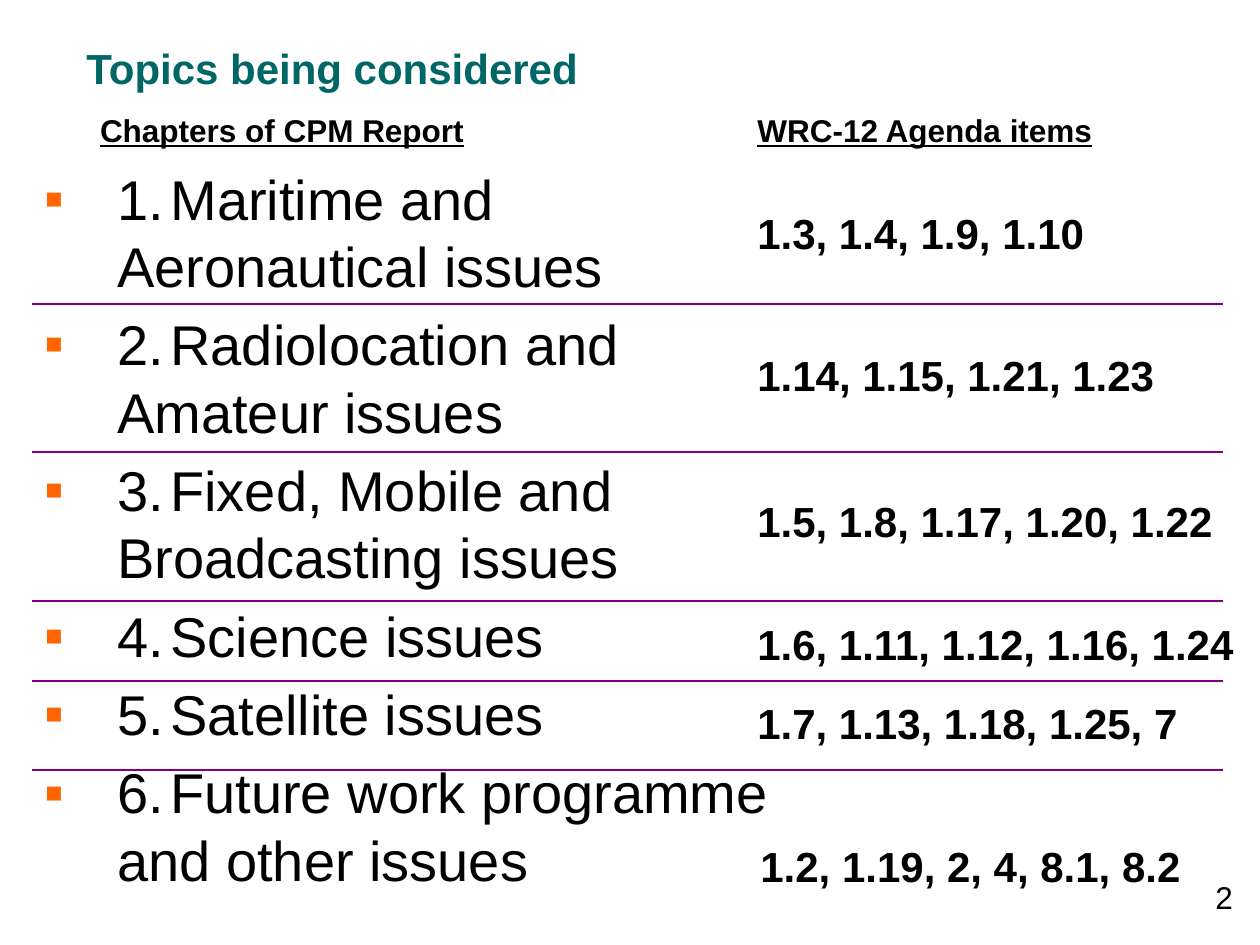
from lxml import etree
from pptx import Presentation
from pptx import util as u
from pptx.dml.color import RGBColor
from pptx.enum import shapes, text
from pptx.oxml.ns import qn

COLORS = {"title": "006666", "text": "000000", "bullet": "FF6600", "rule": "800080"}

# Content: chapter, agenda items, agenda box (left, top, width, height) in px
TOPICS = [
    ("1.\tMaritime and \vAeronautical issues", "1.3, 1.4, 1.9, 1.10", (745, 175, 515, 116)),
    ("2.\tRadiolocation and \vAmateur issues", "1.14, 1.15, 1.21, 1.23", (745, 307, 515, 136)),
    ("3.\tFixed, Mobile and \vBroadcasting issues", "1.5, 1.8, 1.17, 1.20, 1.22", (745, 453, 515, 136)),
    ("4.\tScience issues", "1.6, 1.11, 1.12, 1.16, 1.24", (745, 596, 515, 95)),
    ("5.\tSatellite issues", "1.7, 1.13, 1.18, 1.25, 7", (745, 675, 515, 95)),
    ("6.\tFuture work programme\vand other issues", "1.2, 1.19, 2, 4, 8.1, 8.2", (748, 803, 483, 126)),
]
HEADING = {"size": u.Pt(18), "bold": True, "underline": True}
AGENDA = {"size": u.Pt(24), "bold": True}
CHAPTER = {"size": u.Pt(32)}
RULES_Y = [304, 452, 601, 681, 770]
RULE_LEFT, RULE_RIGHT = 32, 1223
HANGING = 73


def px(n):
    return u.Emu(round(n * 914400 / 126))


def style(paragraph, font, color="text"):
    paragraph.font.name = "Arial"
    paragraph.font.color.rgb = RGBColor.from_string(COLORS[color])
    for key, value in font.items():
        setattr(paragraph.font, key, value)


def add_frame(box, wrap=True, anchor=text.MSO_ANCHOR.TOP):
    frame = slide.shapes.add_textbox(*map(px, box)).text_frame
    frame.word_wrap = wrap
    frame.vertical_anchor = anchor
    return frame


def add_label(words, box, font, color="text", align=text.PP_ALIGN.LEFT, **layout):
    paragraph = add_frame(box, **layout).paragraphs[0]
    paragraph.text = words
    paragraph.alignment = align
    style(paragraph, font, color)


def add_bullet(paragraph):
    props = paragraph._p.get_or_add_pPr()
    props.set("marL", str(px(HANGING)))
    props.set("indent", str(-px(HANGING)))
    bullet_color = etree.SubElement(props, qn("a:buClr"))
    etree.SubElement(bullet_color, qn("a:srgbClr"), val=COLORS["bullet"])
    etree.SubElement(props, qn("a:buFont"), typeface="Arial")
    etree.SubElement(props, qn("a:buChar"), char="▪")


prs = Presentation()
prs.slide_width, prs.slide_height = px(1260), px(945)
slide = prs.slides.add_slide(prs.slide_layouts[6])

# Chapter list
chapters = add_frame((32, 158, 816, 728))
for i, (chapter, _, _) in enumerate(TOPICS):
    paragraph = chapters.paragraphs[0] if i == 0 else chapters.add_paragraph()
    paragraph.text = chapter
    if i:
        paragraph.space_before = u.Pt(6.4)
    add_bullet(paragraph)
    style(paragraph, CHAPTER)

# Rules between the topics
for y in RULES_Y:
    rule = slide.shapes.add_connector(
        shapes.MSO_CONNECTOR.STRAIGHT, px(RULE_LEFT), px(y), px(RULE_RIGHT), px(y))
    rule.line.color.rgb = RGBColor.from_string(COLORS["rule"])
    rule.line.width = u.Pt(0.75)
    etree.SubElement(rule._element.spPr, qn("a:effectLst"))

# Agenda items
for _, items, box in TOPICS:
    add_label(items, box, AGENDA, anchor=text.MSO_ANCHOR.MIDDLE)

# Title, column headings and page number
add_label("Topics being considered", (74, 36, 519, 63), AGENDA, "title", wrap=False)
add_label("Chapters of CPM Report", (84, 105, 396, 49), HEADING, align=text.PP_ALIGN.CENTER)
add_label("WRC-12 Agenda items", (745, 105, 360, 49), HEADING)
add_label("2", (1203, 872, 43, 50), {"size": u.Pt(18)}, wrap=False)

prs.save("out.pptx")
